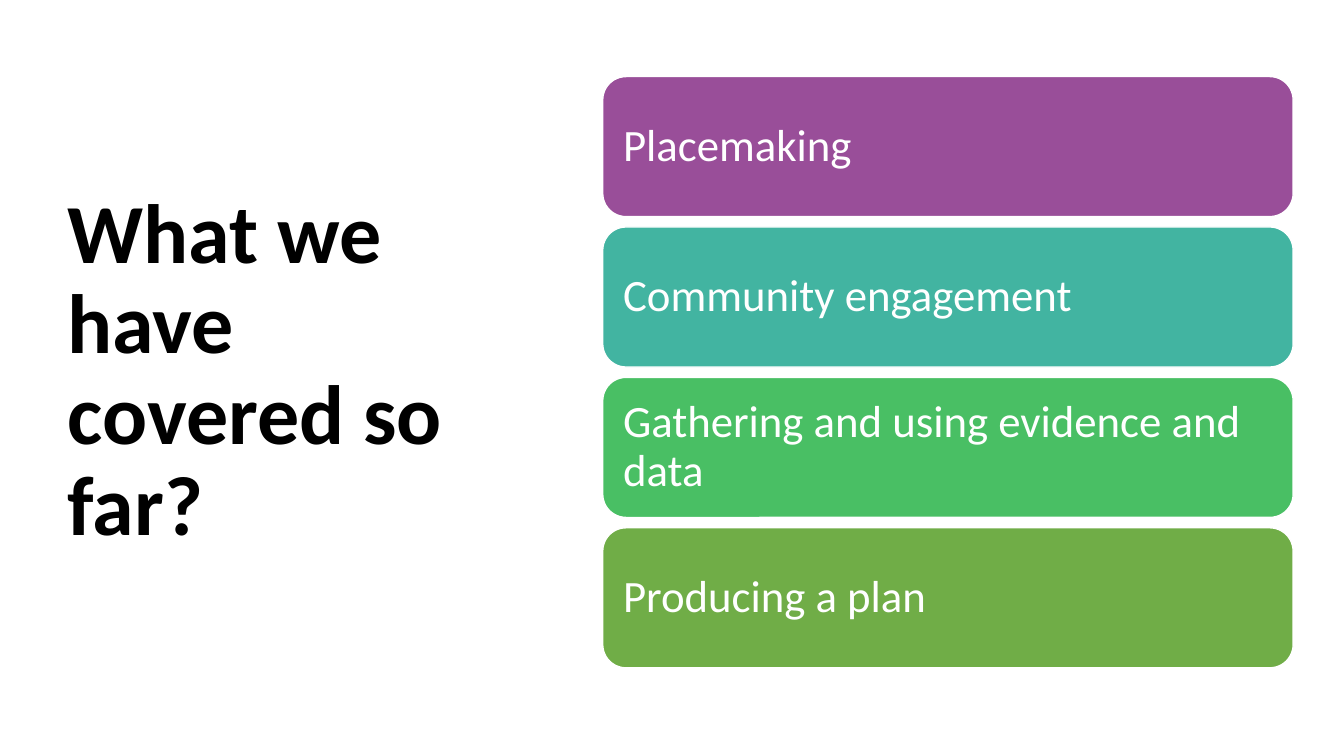
from pptx import Presentation
from pptx.dml.color import RGBColor
from pptx.enum.shapes import MSO_SHAPE as Shape
from pptx.enum.text import MSO_ANCHOR as Anchor, MSO_AUTO_SIZE as AutoSize, PP_ALIGN as Align
from pptx.util import Cm, Pt

TITLE_ONLY = 5
TOPICS = [
    ("Placemaking", "994E99"),
    ("Community engagement", "42B4A1"),
    ("Gathering and using evidence and data", "49BF64"),
    ("Producing a plan", "70AD47"),
]
BAR_LEFT, BAR_TOP, BAR_WIDTH, BAR_HEIGHT = 15.19, 1.93, 17.4, 3.53
BAR_PITCH = 3.79
BAR_MARGIN = Cm(0.34)


def colour(hex_value):
    return RGBColor.from_string(hex_value)


def set_all(target, values):
    for attribute, value in values.items():
        setattr(target, attribute, value)


def write_text(frame, wording, size, hex_value, bold=False):
    frame.text = wording
    set_all(frame, {"word_wrap": True, "auto_size": AutoSize.NONE,
                    "vertical_anchor": Anchor.MIDDLE})
    paragraph = frame.paragraphs[0]
    set_all(paragraph, {"alignment": Align.LEFT, "line_spacing": 0.9})
    font = paragraph.runs[0].font
    set_all(font, {"name": "Calibri", "size": Pt(size), "bold": bold})
    font.color.rgb = colour(hex_value)


def place_title(slide, wording):
    heading = slide.shapes.title
    set_all(heading, {"left": Cm(1.45), "top": Cm(1.73),
                      "width": Cm(10.57), "height": Cm(15.29)})
    write_text(heading.text_frame, wording, 60, "000000", bold=True)


def add_topic_bar(slide, top, wording, fill):
    bar = slide.shapes.add_shape(Shape.ROUNDED_RECTANGLE, Cm(BAR_LEFT), Cm(top),
                                 Cm(BAR_WIDTH), Cm(BAR_HEIGHT))
    bar.shadow.inherit = False
    bar.fill.solid()
    bar.fill.fore_color.rgb = colour(fill)
    bar.line.color.rgb = colour("FFFFFF")
    bar.line.width = Pt(1)
    sides = ("left", "top", "right", "bottom")
    set_all(bar.text_frame, {f"margin_{side}": BAR_MARGIN for side in sides})
    write_text(bar.text_frame, wording, 32, "FFFFFF")


def main():
    deck = Presentation()
    set_all(deck, {"slide_width": Cm(33.87), "slide_height": Cm(19.05)})
    slide = deck.slides.add_slide(deck.slide_layouts[TITLE_ONLY])

    # Question on the left
    place_title(slide, "What we have covered so far?")

    # Stack of topics on the right
    for row, (topic, fill) in enumerate(TOPICS):
        add_topic_bar(slide, BAR_TOP + row * BAR_PITCH, topic, fill)

    deck.save("out.pptx")


if __name__ == "__main__":
    main()
